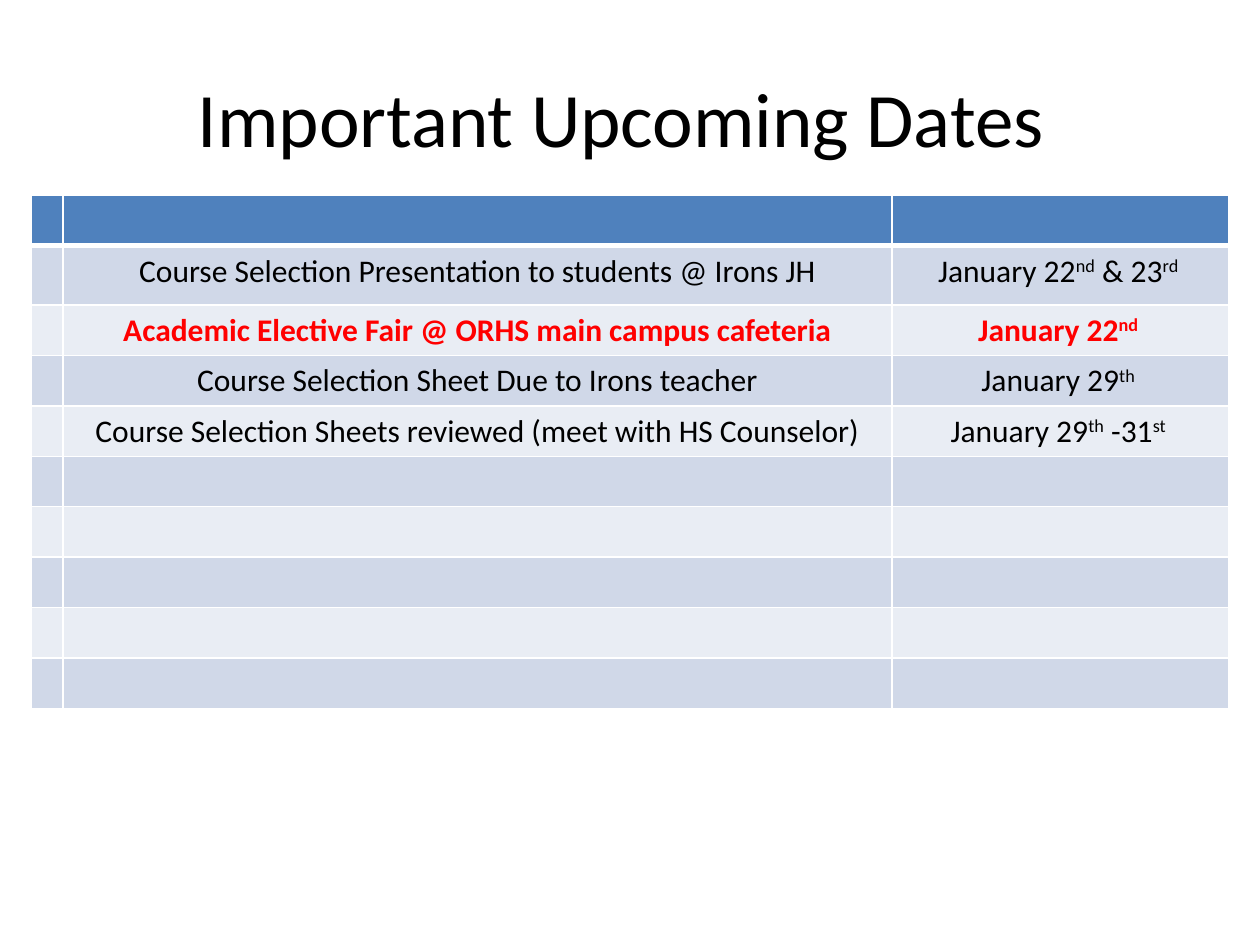
import pptx
import pptx.dml.color
import pptx.enum.text
import pptx.oxml
import pptx.oxml.ns
import pptx.util

Inches = pptx.util.Inches
Pt = pptx.util.Pt
RGBColor = pptx.dml.color.RGBColor
PP_ALIGN = pptx.enum.text.PP_ALIGN
MSO_ANCHOR = pptx.enum.text.MSO_ANCHOR

BLACK = RGBColor(0x00, 0x00, 0x00)
RED = RGBColor(0xFF, 0x00, 0x00)
WHITE = RGBColor(0xFF, 0xFF, 0xFF)
HEADER = RGBColor(0x4F, 0x81, 0xBD)
BANDS = [RGBColor(0xE9, 0xED, 0xF4), RGBColor(0xD0, 0xD8, 0xE8)]

COLUMN_WIDTHS = [0.25, 6.58, 2.67]
ROW_HEIGHTS = [0.37, 0.47] + [0.38] * 6 + [0.15, 0.38]
HIGHLIGHT_ROW = 2
EVENTS = [
    ("Course Selection Presentation to students @ Irons JH",
     ["January 22", "nd", " & 23", "rd "]),
    ("Academic Elective Fair @ ORHS main campus cafeteria",
     ["January 22", "nd "]),
    ("Course Selection Sheet Due to Irons teacher",
     ["January 29", "th "]),
    ("Course Selection Sheets reviewed (meet with HS Counselor)",
     ["January 29", "th", " -31", "st "]),
]


class SlideBuilder:
    font_name = "Calibri"
    title_size = Pt(44)
    body_size = Pt(18)

    def __init__(self, slide):
        self.slide = slide

    def style(self, r, size, color=BLACK, bold=False):
        r.font.name = self.font_name
        r.font.size = size
        r.font.bold = bold
        r.font.color.rgb = color

    def title(self, text, left, top, width, height):
        sp = self.slide.shapes.add_textbox(
            Inches(left), Inches(top), Inches(width), Inches(height))
        tf = sp.text_frame
        tf.word_wrap = True
        tf.vertical_anchor = MSO_ANCHOR.MIDDLE
        tf.text = text
        p = tf.paragraphs[0]
        p.alignment = PP_ALIGN.CENTER
        self.style(p.runs[0], self.title_size)

    def table(self, left, top, widths, heights):
        frame = self.slide.shapes.add_table(
            len(heights), len(widths), Inches(left), Inches(top),
            Inches(sum(widths)), Inches(sum(heights)))
        table = frame.table
        for column, width in zip(table.columns, widths):
            column.width = Inches(width)
        for i, (row, height) in enumerate(zip(table.rows, heights)):
            row.height = Inches(height)
            for cell in row.cells:
                self.borders(cell, top=3 if i == 1 else 1, bottom=3 if i == 0 else 1)
                cell.fill.solid()
                cell.fill.fore_color.rgb = BANDS[i % 2] if i else HEADER
        return table

    def borders(self, cell, top, bottom):
        tc_pr = cell._tc.get_or_add_tcPr()
        for side, width in (("L", 1), ("R", 1), ("T", top), ("B", bottom)):
            tc_pr.append(pptx.oxml.parse_xml(
                f'<a:ln{side} {pptx.oxml.ns.nsdecls("a")} w="{Pt(width)}">'
                f'<a:solidFill><a:srgbClr val="{WHITE}"/></a:solidFill></a:ln{side}>'))

    def cell_text(self, cell, parts, color, bold):
        p = cell.text_frame.paragraphs[0]
        p.alignment = PP_ALIGN.CENTER
        for i, part in enumerate(parts):
            r = p.add_run()
            r.text = part
            self.style(r, self.body_size, color, bold)
            if i % 2:
                r._r.get_or_add_rPr().set("baseline", "30000")


def main():
    prs = pptx.Presentation()
    prs.slide_width = Inches(10)
    prs.slide_height = Inches(7.5)
    s = SlideBuilder(prs.slides.add_slide(prs.slide_layouts[6]))
    s.title("Important Upcoming Dates ", 0.5, 0.3, 9, 1.25)
    table = s.table(0.25, 1.55, COLUMN_WIDTHS, ROW_HEIGHTS)
    for row, (event, date) in enumerate(EVENTS, start=1):
        highlight = row == HIGHLIGHT_ROW
        color = RED if highlight else BLACK
        s.cell_text(table.cell(row, 1), [event], color, highlight)
        s.cell_text(table.cell(row, 2), date, color, highlight)
    prs.save("out.pptx")


if __name__ == "__main__":
    main()
